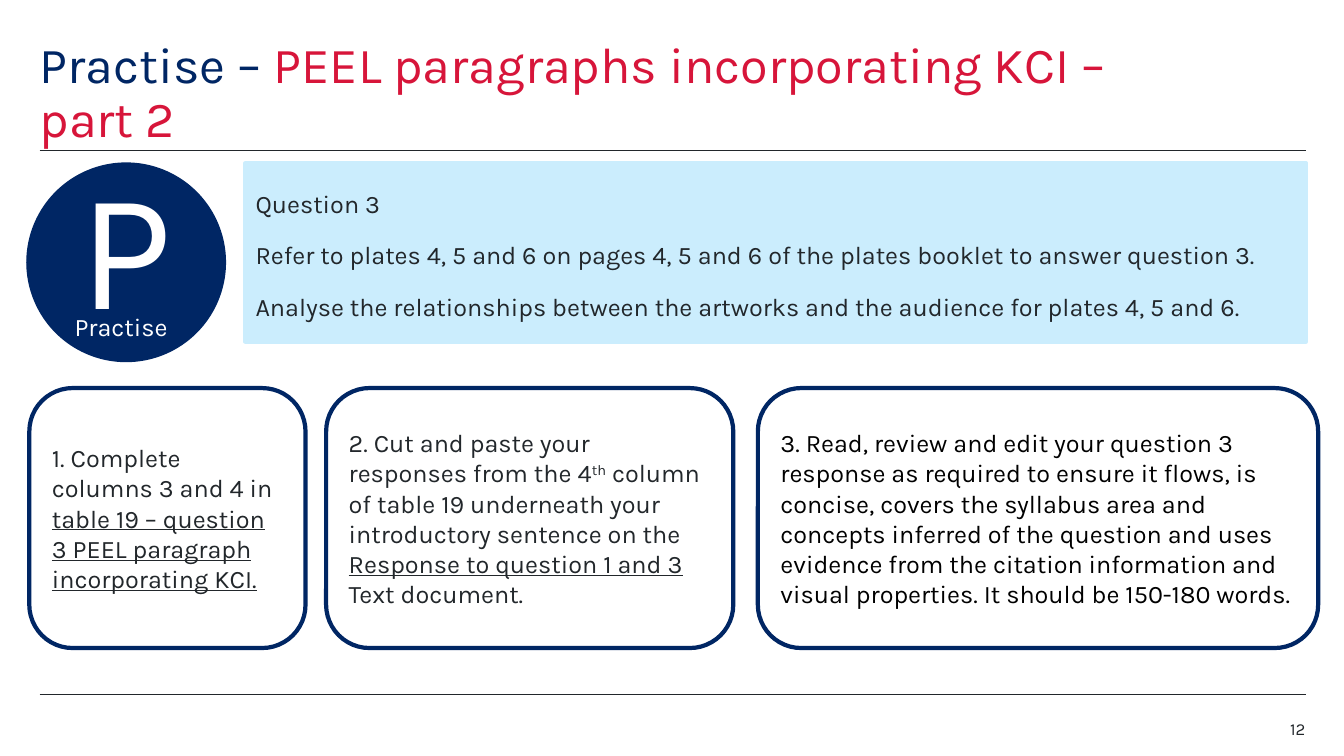
from pptx import Presentation
from pptx.dml.color import RGBColor
from pptx.enum.shapes import MSO_CONNECTOR, MSO_SHAPE
from pptx.enum.text import MSO_ANCHOR, PP_ALIGN
from pptx.oxml.ns import qn
from pptx.util import Cm, Pt
from lxml import etree

STRAIGHT = MSO_CONNECTOR.STRAIGHT
OVAL, RECT, ROUNDED = MSO_SHAPE.OVAL, MSO_SHAPE.RECTANGLE, MSO_SHAPE.ROUNDED_RECTANGLE
TOP, MIDDLE = MSO_ANCHOR.TOP, MSO_ANCHOR.MIDDLE
LEFT, CENTER, RIGHT = PP_ALIGN.LEFT, PP_ALIGN.CENTER, PP_ALIGN.RIGHT

FONT = "Karla"
NAVY, RED, INK, SKY = "002664", "D7153A", "22272B", "CBEDFD"
WHITE, BLACK = "FFFFFF", "000000"
MARGIN_LEFT, MARGIN_RIGHT = 1.0, 32.9
STEP_TOP, STEP_HEIGHT = 9.78, 6.55

QUESTION = [
    "Question 3",
    "Refer to plates 4, 5 and 6 on pages 4, 5 and 6 of the plates booklet to answer question 3.",
    "Analyse the relationships between the artworks and the audience for plates 4, 5 and 6.",
]

# Each step: left, width, text colour, runs
STEPS = [
    (0.74, 6.96, INK, [
        "1. Complete columns 3 and 4 in ",
        ("table 19 – question 3 PEEL paragraph incorporating KCI.", {"underline": True}),
    ]),
    (8.22, 10.26, INK, [
        "2. Cut and paste your responses from the 4",
        ("th", {"superscript": True}),
        " column of table 19 underneath your introductory sentence on the ",
        ("Response to question 1 and 3", {"underline": True}),
        " Text document.",
    ]),
    (19.1, 14.12, BLACK, [
        "3. Read, review and edit your question 3 response as required to ensure it flows, "
        "is concise, covers the syllabus area and concepts inferred of the question and uses "
        "evidence from the citation information and visual properties. "
        "It should be 150-180 words.",
    ]),
]


def rgb(value):
    return RGBColor.from_string(value)


def add_run(paragraph, text, size, color, underline=False, superscript=False):
    run = paragraph.add_run()
    run.text = text
    run.font.name = FONT
    run.font.size = Pt(size)
    run.font.color.rgb = rgb(color)
    if underline:
        run.font.underline = True
    if superscript:
        run._r.get_or_add_rPr().set("baseline", "30000")


def write(shape, paragraphs, size=18, color=INK, align=LEFT, anchor=MIDDLE,
          line_spacing=None, space_before=0):
    """Each paragraph is a list of runs: a string, or a string with its format."""
    frame = shape.text_frame
    frame.word_wrap = True
    frame.vertical_anchor = anchor
    for index, runs in enumerate(paragraphs):
        paragraph = frame.add_paragraph() if index else frame.paragraphs[0]
        paragraph.alignment = align
        if line_spacing:
            paragraph.line_spacing = line_spacing
        if index and space_before:
            paragraph.space_before = Pt(space_before)
        for run in runs:
            text, changes = (run, {}) if isinstance(run, str) else run
            add_run(paragraph, text, **{"size": size, "color": color, **changes})


def add_panel(slide, kind, left, top, width, height, fill, line, line_width):
    panel = slide.shapes.add_shape(kind, Cm(left), Cm(top), Cm(width), Cm(height))
    panel.shadow.inherit = False
    panel.fill.solid()
    panel.fill.fore_color.rgb = rgb(fill)
    panel.line.color.rgb = rgb(line)
    panel.line.width = Pt(line_width)
    return panel


def add_label(slide, left, top, width, height, runs, **text_format):
    label = slide.shapes.add_textbox(Cm(left), Cm(top), Cm(width), Cm(height))
    frame = label.text_frame
    frame.margin_left = frame.margin_right = frame.margin_top = frame.margin_bottom = 0
    write(label, [runs], anchor=TOP, **text_format)


def add_rule(slide, y):
    rule = slide.shapes.add_connector(
        STRAIGHT, Cm(MARGIN_LEFT), Cm(y), Cm(MARGIN_RIGHT), Cm(y))
    rule.line.color.rgb = rgb(INK)
    rule.line.width = Pt(0.5)
    etree.SubElement(rule._element.spPr, qn("a:effectLst"))


def main():
    presentation = Presentation()
    presentation.slide_width, presentation.slide_height = Cm(33.87), Cm(19.05)
    slide = presentation.slides.add_slide(presentation.slide_layouts[6])

    # Rules and title
    for y in (3.8, 17.5):
        add_rule(slide, y)
    add_label(slide, MARGIN_LEFT, 1, 28, 2.8,
              ["Practise – ", ("PEEL paragraphs incorporating KCI – part 2", {"color": RED})],
              size=36, color=NAVY, line_spacing=0.9)

    # Practise badge; the lower margin lifts the letter above its caption
    badge = add_panel(slide, OVAL, 0.68, 4.11, 5, 5, NAVY, NAVY, 1)
    badge.text_frame.margin_bottom = Cm(1.15)
    write(badge, [["P"]], size=120, color=WHITE, align=CENTER)
    add_label(slide, 1.88, 7.85, 2.62, 1.22, ["Practise"], color=WHITE)

    # Question
    question = add_panel(slide, RECT, 6.19, 4.11, 26.72, 4.5, SKY, SKY, 3)
    write(question, [[line] for line in QUESTION], line_spacing=1.15, space_before=12)

    # Steps
    for left, width, color, runs in STEPS:
        step = add_panel(slide, ROUNDED, left, STEP_TOP, width, STEP_HEIGHT, WHITE, NAVY, 3)
        write(step, [runs], color=color)

    # Slide number
    add_label(slide, 30.9, 18.11, 2, 0.51, ["12"], size=12, align=RIGHT)

    presentation.save("out.pptx")


if __name__ == "__main__":
    main()
